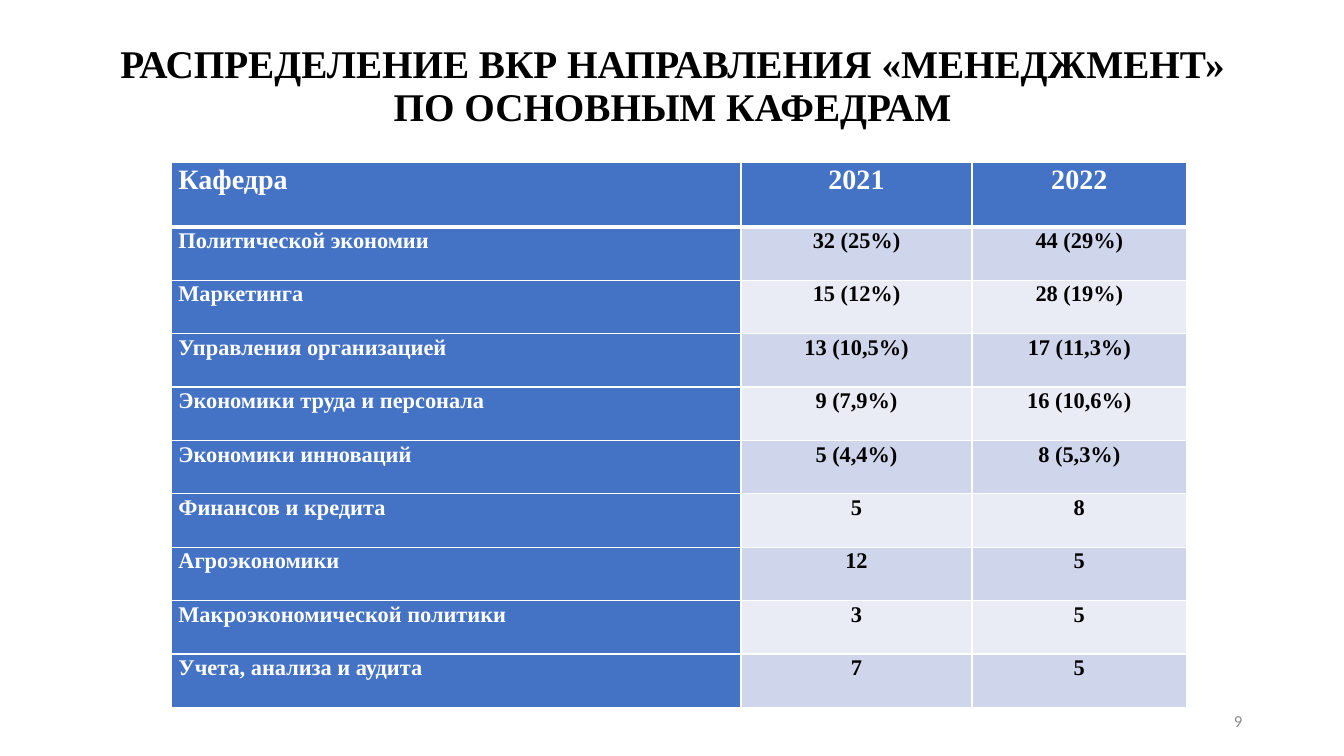
from lxml import etree
from pptx import Presentation
from pptx import util as u
from pptx.dml.color import RGBColor
from pptx.enum import text
from pptx.oxml.ns import qn

SERIF = "Times New Roman"
WHITE, BLACK, GREY = "FFFFFF", "000000", "8C8C8C"
BLUE, BANDS = "4472C4", ("E9EBF5", "CFD5EA")
LEFT, CENTER, RIGHT = text.PP_ALIGN.LEFT, text.PP_ALIGN.CENTER, text.PP_ALIGN.RIGHT

TITLE = "РАСПРЕДЕЛЕНИЕ ВКР НАПРАВЛЕНИЯ «МЕНЕДЖМЕНТ» ПО ОСНОВНЫМ КАФЕДРАМ"
COLUMN_WIDTHS = (5.65, 2.29, 2.13)
HEADER_HEIGHT, ROW_HEIGHT = 0.64, 0.53
ROWS = [
    ("Кафедра", "2021", "2022"),
    ("Политической экономии", "32 (25%)", "44 (29%)"),
    ("Маркетинга", "15 (12%)", "28 (19%)"),
    ("Управления организацией", "13 (10,5%)", "17 (11,3%)"),
    ("Экономики труда и персонала", "9 (7,9%)", "16 (10,6%)"),
    ("Экономики инноваций", "5 (4,4%)", "8 (5,3%)"),
    ("Финансов и кредита", "5", "8"),
    ("Агроэкономики", "12", "5"),
    ("Макроэкономической политики", "3", "5"),
    ("Учета, анализа и аудита", "7", "5"),
]


def color(value):
    return RGBColor.from_string(value)


def set_all(target, values):
    for name, value in values.items():
        setattr(target, name, value)


def write(frame, words, size, tint, align, spacing=1.0, name=SERIF, bold=True):
    para = frame.paragraphs[0]
    set_all(para, {"alignment": align, "line_spacing": spacing})
    span = para.add_run()
    span.text = words
    set_all(span.font, {"name": name, "size": u.Pt(size), "bold": bold})
    span.font.color.rgb = color(tint)


def add_text(page, place, words, **style):
    box = page.shapes.add_textbox(*map(u.Inches, place))
    set_all(box.text_frame, {"word_wrap": True, "vertical_anchor": text.MSO_ANCHOR.MIDDLE})
    write(box.text_frame, words, **style)


def add_borders(cell, widths):
    properties = cell._tc.get_or_add_tcPr()
    for side, width in widths.items():
        line = etree.SubElement(properties, qn("a:ln" + side), w=str(u.Pt(width)))
        fill = etree.SubElement(line, qn("a:solidFill"))
        etree.SubElement(fill, qn("a:srgbClr"), val=WHITE)


def format_cell(cell, words, row, column):
    header, label = row == 0, column == 0
    filled = header or label
    set_all(cell, {
        "margin_left": u.Inches(0.07), "margin_right": u.Inches(0.07),
        "margin_top": 0, "margin_bottom": 0,
    })
    # Borders come before the fill in the cell properties
    add_borders(cell, {"L": 1, "R": 1, "T": 3 if row == 1 else 1, "B": 3 if header else 1})
    cell.fill.solid()
    cell.fill.fore_color.rgb = color(BLUE if filled else BANDS[row % 2])
    write(cell.text_frame, words, size=20 if header else 16,
          tint=WHITE if filled else BLACK,
          align=LEFT if label else CENTER, spacing=1.07)


def add_department_table(page, left, top):
    heights = [HEADER_HEIGHT] + [ROW_HEIGHT] * (len(ROWS) - 1)
    place = (left, top, sum(COLUMN_WIDTHS), sum(heights))
    table = page.shapes.add_table(len(ROWS), len(COLUMN_WIDTHS), *map(u.Inches, place)).table
    for column, width in zip(table.columns, COLUMN_WIDTHS):
        column.width = u.Inches(width)
    for row, height in zip(table.rows, heights):
        row.height = u.Inches(height)
    for row, values in enumerate(ROWS):
        for column, words in enumerate(values):
            format_cell(table.cell(row, column), words, row, column)


def main():
    deck = Presentation()
    set_all(deck, {"slide_width": u.Inches(13.33), "slide_height": u.Inches(7.5)})
    page = deck.slides.add_slide(deck.slide_layouts[6])

    # Title
    add_text(page, (0.92, 0.14, 11.5, 1.45), TITLE,
             size=28, tint=BLACK, align=CENTER, spacing=0.9)

    # Theses by department and year
    add_department_table(page, 1.7, 1.61)

    # Page number
    add_text(page, (9.42, 6.95, 3, 0.4), "9",
             size=12, tint=GREY, align=RIGHT, name="Calibri", bold=False)

    deck.save("out.pptx")


if __name__ == "__main__":
    main()
